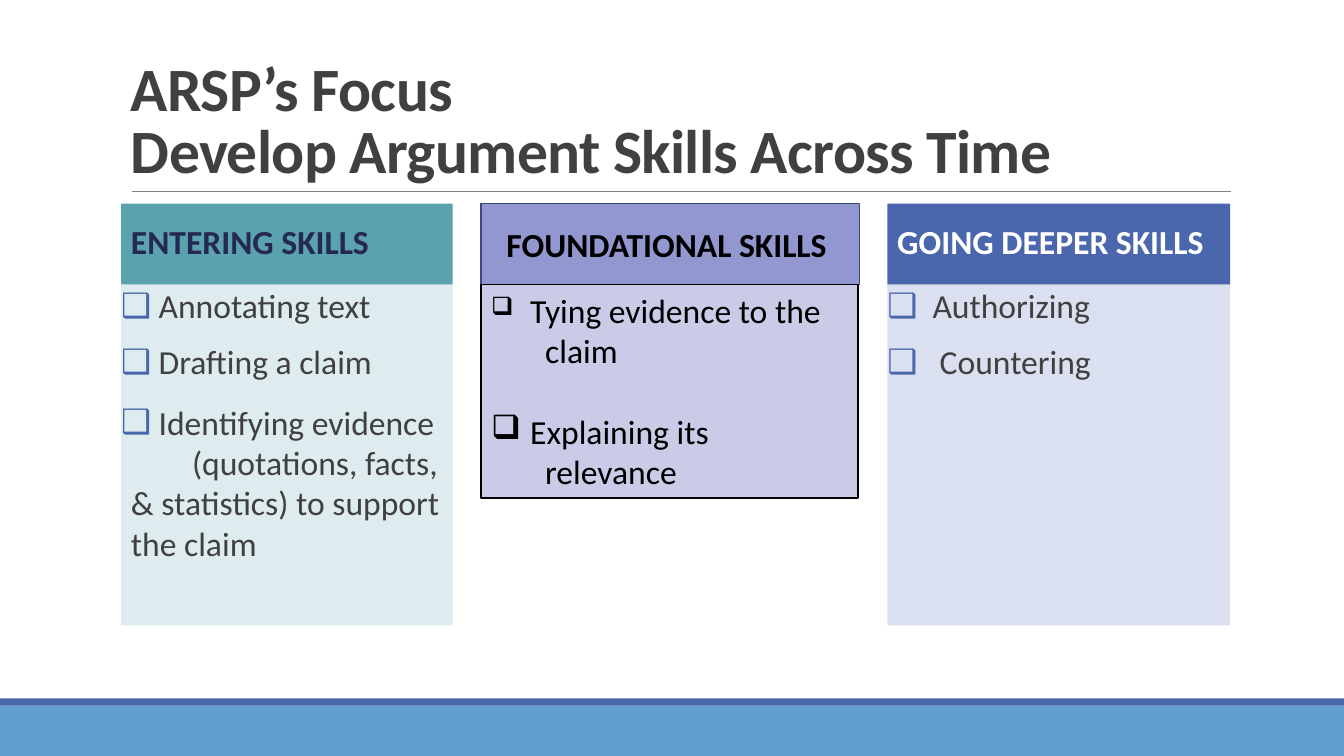
from lxml.etree import SubElement
from pptx import Presentation
from pptx.dml.color import RGBColor
from pptx.enum.shapes import MSO_CONNECTOR, MSO_SHAPE
from pptx.enum.text import MSO_ANCHOR, MSO_AUTO_SIZE, PP_ALIGN
from pptx.oxml.ns import qn
from pptx.util import Cm, Pt

COLORS = {
    "ink": "404040", "navy": "242852", "white": "FFFFFF", "black": "000000",
    "rule": "808080", "blue": "4A66AC", "sky": "629DD1",
    "teal": "5AA2AE", "pale_teal": "DEECEF", "pale_blue": "DAE0EF",
    "violet": "9297CF", "pale_violet": "C9CBE7", "outline": "374B7F",
}
WIDTH, HEIGHT = 33.87, 19.05
HEADER_TOP, HEADER_HEIGHT = 5.13, 2.04
BODY_TOP, BODY_HEIGHT = HEADER_TOP + HEADER_HEIGHT, 8.59


def color(name):
    return RGBColor.from_string(COLORS[name])


def write(paragraph, text, size=24, ink="ink", bold=False, align=PP_ALIGN.LEFT,
          line=1.0, before=0, after=0, margin=0, hanging=0, bullet=None,
          bullet_percent=100, tab=None, tracking=None):
    """Fill a paragraph with text and apply its format."""
    paragraph.text = text
    paragraph.alignment = align
    paragraph.line_spacing = line
    paragraph.space_before, paragraph.space_after = Pt(before), Pt(after)
    for run in paragraph.runs:
        font = run.font
        font.name, font.size, font.bold = "Calibri", Pt(size), bold
        font.color.rgb = color(ink)
        if tracking:
            run._r.get_or_add_rPr().set("spc", str(tracking))
    properties = paragraph._p.get_or_add_pPr()
    properties.set("marL", str(Cm(margin)))
    properties.set("indent", str(-Cm(hanging)))
    if bullet:
        bullet_color = SubElement(properties, qn("a:buClr"))
        SubElement(bullet_color, qn("a:srgbClr"), val=COLORS[bullet])
        SubElement(properties, qn("a:buSzPct"), val=str(bullet_percent * 1000))
        SubElement(properties, qn("a:buChar"), char="❑")
    else:
        SubElement(properties, qn("a:buNone"))
    if tab:
        stops = SubElement(properties, qn("a:tabLst"))
        SubElement(stops, qn("a:tab"), pos=str(Cm(tab)), algn="l")


class SlideBuilder:
    """Hold the slide and add styled elements to it."""

    def __init__(self, presentation):
        self.slide = presentation.slides.add_slide(presentation.slide_layouts[4])

    def style(self, shape, fill=None, outline=None):
        if fill:
            shape.fill.solid()
            shape.fill.fore_color.rgb = color(fill)
        if outline:
            shape.line.color.rgb = color(outline)
            shape.line.width = Pt(1.25)
        else:
            shape.line.fill.background()

    def fill_text(self, shape, paragraphs, anchor, inset):
        frame = shape.text_frame
        frame.word_wrap = True
        frame.auto_size = MSO_AUTO_SIZE.NONE
        frame.vertical_anchor = anchor
        frame.margin_left = frame.margin_right = Cm(inset)
        frame.margin_top = frame.margin_bottom = Cm(0.13)
        for index, (text, options) in enumerate(paragraphs):
            paragraph = frame.add_paragraph() if index else frame.paragraphs[0]
            write(paragraph, text, **options)

    def placeholder(self, index, box, paragraphs, fill=None,
                    anchor=MSO_ANCHOR.TOP, inset=0.25):
        shape = self.slide.placeholders[index]
        shape.left, shape.top, shape.width, shape.height = map(Cm, box)
        self.style(shape, fill)
        self.fill_text(shape, paragraphs, anchor, inset)

    def rectangle(self, box, fill, outline=None, paragraphs=(),
                  anchor=MSO_ANCHOR.TOP):
        shape = self.slide.shapes.add_shape(MSO_SHAPE.RECTANGLE, *map(Cm, box))
        shape.shadow.inherit = False
        self.style(shape, fill, outline)
        self.fill_text(shape, paragraphs, anchor, 0.25)

    def rule(self, left, right, top):
        line = self.slide.shapes.add_connector(
            MSO_CONNECTOR.STRAIGHT, Cm(left), Cm(top), Cm(right), Cm(top))
        line.line.color.rgb = color("rule")
        line.line.width = Pt(0.5)
        SubElement(line._element.spPr, qn("a:effectLst"))


def main():
    presentation = Presentation()
    presentation.slide_width, presentation.slide_height = Cm(WIDTH), Cm(HEIGHT)
    builder = SlideBuilder(presentation)

    builder.rectangle((0, 17.78, WIDTH, 1.27), "sky")
    builder.rectangle((0, 17.6, WIDTH, 0.18), "blue")
    builder.rule(3.33, 31.01, 4.83)
    title = "ARSP’s Focus\vDevelop Argument Skills Across Time"
    builder.placeholder(
        0, (3.05, 0.79, 27.94, 4.04),
        [(title, dict(size=44, bold=True, line=0.85, tracking=-50))],
        anchor=MSO_ANCHOR.BOTTOM)

    spacing = dict(line=0.9, before=12, after=2)
    item = dict(spacing, margin=0.25, hanging=0.25, bullet="blue")
    entering = [
        (" Annotating text", item),
        (" Drafting a claim", item),
        (" Identifying evidence\v\t(quotations, facts, & statistics) to support the claim",
         dict(item, line=1.0, tab=1.79)),
    ]
    deeper = [
        ("Authorizing", dict(item, margin=1.14, hanging=1.14)),
        ("Countering", dict(item, margin=1.32, hanging=1.32)),
    ]
    columns = [
        (1, 3.05, 8.36, "ENTERING SKILLS", "navy", "teal", "pale_teal", entering),
        (3, 22.36, 8.64, "GOING DEEPER SKILLS", "white", "blue", "pale_blue", deeper),
    ]
    for index, left, width, heading, ink, fill, pale, items in columns:
        builder.placeholder(
            index, (left, HEADER_TOP, width, HEADER_HEIGHT),
            [(heading, dict(spacing, ink=ink, bold=True))], fill, MSO_ANCHOR.MIDDLE)
        builder.placeholder(
            index + 1, (left, BODY_TOP, width, BODY_HEIGHT), items, pale, inset=0)

    point = dict(ink="black", margin=0.79, hanging=0.79, bullet="black")
    follow_on = dict(ink="black", margin=1.36)
    foundational = [
        (" Tying evidence to the", dict(point, bullet_percent=75)),
        ("claim", follow_on),
        (" Explaining its", dict(point, before=29)),
        ("relevance", follow_on),
    ]
    builder.rectangle(
        (12.13, HEADER_TOP, 9.53, HEADER_HEIGHT), "violet", "outline",
        [("FOUNDATIONAL SKILLS ",
          dict(ink="black", bold=True, align=PP_ALIGN.CENTER))], MSO_ANCHOR.MIDDLE)
    builder.rectangle(
        (12.13, BODY_TOP, 9.5, 5.38), "pale_violet", "black", foundational)

    presentation.save("out.pptx")


if __name__ == "__main__":
    main()
